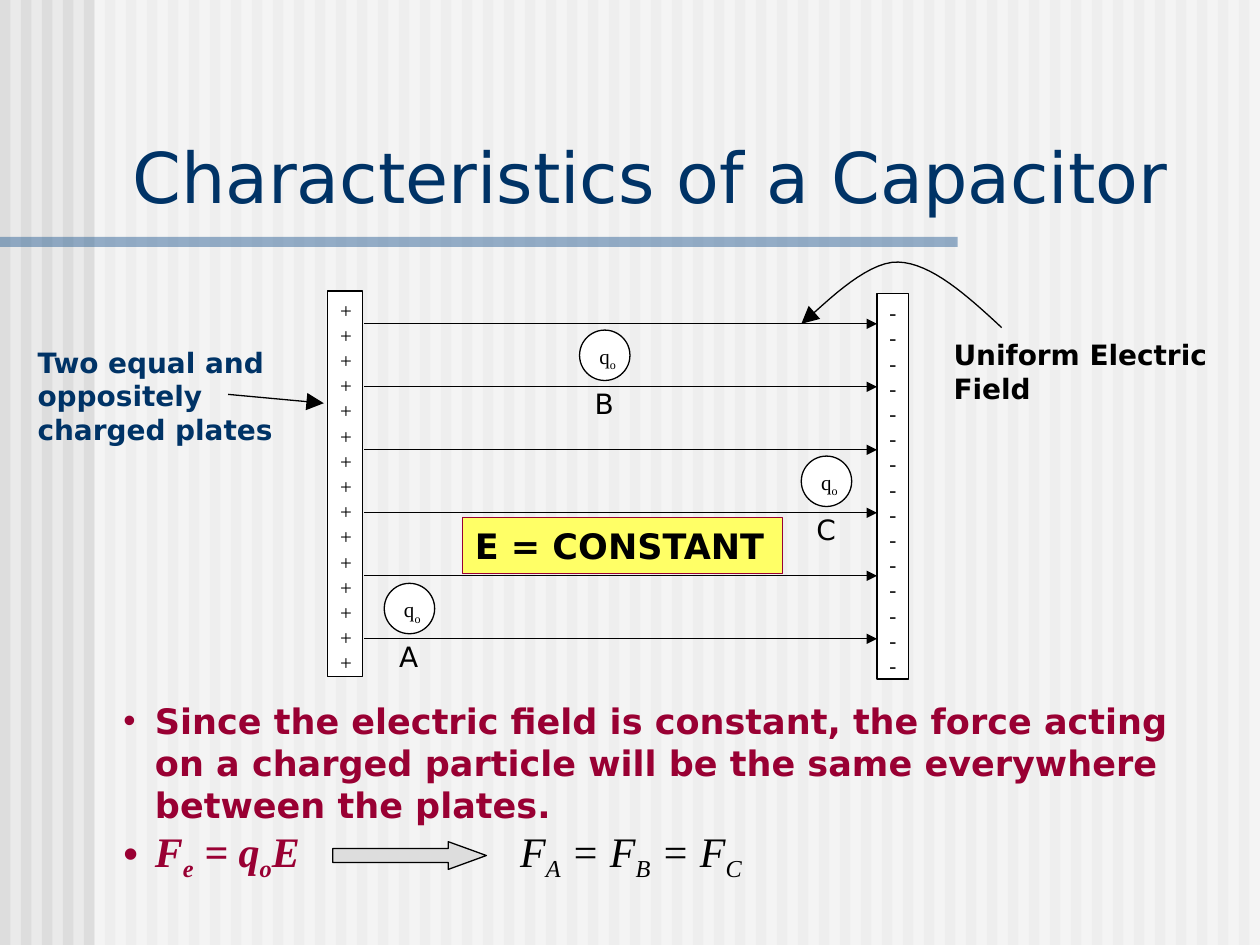
import dataclasses
import typing

import lxml.etree
import pptx
import pptx.dml.color
import pptx.enum.shapes
import pptx.enum.text
import pptx.oxml.ns
import pptx.util

COLS, ROWS = 100, 75
KIND = pptx.enum.shapes.MSO_SHAPE
FIT = pptx.enum.text.MSO_AUTO_SIZE
ANCHOR = pptx.enum.text.MSO_ANCHOR
ALIGN = pptx.enum.text.PP_ALIGN


class Box(typing.NamedTuple):
    """Place and size in columns and rows of the slide grid."""
    col: float
    row: float
    cols: float
    rows: float


class Spot(typing.NamedTuple):
    col: float
    row: float


@dataclasses.dataclass(frozen=True)
class Style:
    size: float
    color: str
    font: str = "DejaVu Sans"
    bold: bool = False
    italic: bool = False


@dataclasses.dataclass(frozen=True)
class Theme:
    back: str = "EAEAEA"
    stripe: str = "DDDDDD"
    paper: str = "FFFFFF"
    ink: str = "000000"
    rule: str = "336699"
    note: str = "FFFF66"
    edge: str = "990033"
    line: float = 0.75
    title: Style = Style(40, "003366")
    plates: Style = Style(16, "003366", bold=True)
    field: Style = Style(16, "000000", bold=True)
    letter: Style = Style(16, "000000")
    sign: Style = Style(12, "000000", "Times New Roman")
    const: Style = Style(20, "000000", bold=True)
    point: Style = Style(20, "990033", bold=True)
    force: Style = Style(24, "990033", "Times New Roman", True, True)
    equal: Style = Style(24, "000000", "Times New Roman", italic=True)


@dataclasses.dataclass(frozen=True)
class Charge:
    letter: str
    spot: Spot


THEME = Theme()
CHARGES = [Charge("B", Spot(46, 26.2)), Charge("A", Spot(30.5, 46.3)),
           Charge("C", Spot(63.6, 36.2))]
CURVE = [[Spot(79.5, 26), Spot(76.7, 23.4), Spot(73.9, 20.9), Spot(71.3, 20.8)],
         [Spot(71.3, 20.8), Spot(68.6, 20.7), Spot(65, 24.6), Spot(63.6, 25.7)]]

deck = pptx.Presentation()
deck.slide_width, deck.slide_height = pptx.util.Inches(10), pptx.util.Inches(7.5)
slide = deck.slides.add_slide(deck.slide_layouts[1])
shapes = slide.shapes


def across(col: float) -> int:
    return round(deck.slide_width * col / COLS)


def down(row: float) -> int:
    return round(deck.slide_height * row / ROWS)


def area(box: Box) -> tuple[int, int, int, int]:
    return across(box.col), down(box.row), across(box.cols), down(box.rows)


def rgb(code: str) -> pptx.dml.color.RGBColor:
    return pptx.dml.color.RGBColor.from_string(code)


def child(node, tag: str, **attrs: str):
    return lxml.etree.SubElement(node, pptx.oxml.ns.qn(tag), attrs)


def fill(para, text: str, style: Style) -> None:
    """Write one paragraph; parts between bars are subscripts."""
    para.alignment = ALIGN.LEFT
    for i, part in enumerate(text.split("|")):
        if not part:
            continue
        run = para.add_run()
        run.text = part
        font = run.font
        font.name, font.size = style.font, pptx.util.Pt(style.size)
        font.bold, font.italic = style.bold, style.italic
        font.color.rgb = rgb(style.color)
        if i % 2:
            run._r.get_or_add_rPr().set("baseline", "-25000")


def write(shape, texts: list[str], style: Style, wrap: bool = True) -> None:
    frame = shape.text_frame
    frame.word_wrap = wrap
    frame.auto_size = FIT.NONE
    frame.vertical_anchor = ANCHOR.TOP
    for i, text in enumerate(texts):
        fill(frame.add_paragraph() if i else frame.paragraphs[0], text, style)


def label(box: Box, text: str, style: Style, wrap: bool = True) -> None:
    write(shapes.add_textbox(*area(box)), [text], style, wrap)


def block(box: Box, color: str, edge: str = "", kind=KIND.RECTANGLE, alpha: int = 100):
    shape = shapes.add_shape(kind, *area(box))
    shape.shadow.inherit = False
    shape.fill.solid()
    shape.fill.fore_color.rgb = rgb(color)
    if alpha < 100:
        tint = shape.element.xpath("./p:spPr/a:solidFill/a:srgbClr")[0]
        child(tint, "a:alpha", val=str(alpha * 1000))
    if edge:
        shape.line.color.rgb = rgb(edge)
        shape.line.width = pptx.util.Pt(THEME.line)
    else:
        shape.line.fill.background()
    return shape


def point(shape, size: str) -> None:
    """Style a line and put an arrowhead at its end."""
    shape.line.color.rgb = rgb(THEME.ink)
    shape.line.width = pptx.util.Pt(THEME.line)
    line = shape.element.xpath("./p:spPr/a:ln")[0]
    child(line, "a:tailEnd", type="triangle", w=size, len=size)


def arrow(start: Spot, end: Spot, size: str = "med") -> None:
    line = shapes.add_connector(pptx.enum.shapes.MSO_CONNECTOR.STRAIGHT,
                                across(start.col), down(start.row),
                                across(end.col), down(end.row))
    point(line, size)
    child(line.element.spPr, "a:effectLst")


def bend(curve: list[Spot], t: float) -> tuple[int, int]:
    """Point at share t of a cubic Bezier curve."""
    parts = [(1 - t) ** 3, 3 * t * (1 - t) ** 2, 3 * t * t * (1 - t), t ** 3]
    return (across(sum(k * p.col for k, p in zip(parts, curve))),
            down(sum(k * p.row for k, p in zip(parts, curve))))


def sweep(curves: list[list[Spot]], steps: int = 16) -> None:
    """Draw joined Bezier curves as one open arrow."""
    dots = [bend(c, i / steps) for c in curves for i in range(1, steps + 1)]
    path = shapes.build_freeform(*bend(curves[0], 0))
    path.add_line_segments(dots, close=False)
    shape = path.convert_to_shape()
    shape.shadow.inherit = False
    shape.fill.background()
    point(shape, "lg")


def plate(box: Box, sign: str) -> None:
    shape = block(box, THEME.paper, THEME.ink)
    write(shape, [sign] * 11 + [sign * 4], THEME.sign)
    for para in shape.text_frame.paragraphs:
        para.alignment = ALIGN.CENTER


def charge(item: Charge) -> None:
    col, row = item.spot
    ball = block(Box(col, row, 4, 4), THEME.paper, THEME.ink, KIND.OVAL)
    write(ball, ["q|o|"], THEME.sign)
    ball.text_frame.margin_right = 0
    label(Box(col + 0.2, row + 4, 3.5, 3.7), item.letter, THEME.letter, False)


def hold(shape, box: Box) -> None:
    """Place a placeholder in front of what is drawn so far."""
    shape.left, shape.top, shape.width, shape.height = area(box)
    shape.element.getparent().append(shape.element)


def scene() -> None:
    slide.background.fill.solid()
    slide.background.fill.fore_color.rgb = rgb(THEME.back)
    for i in range(60):
        block(Box(i * COLS / 60, 0, COLS / 120, ROWS), THEME.stripe)
    block(Box(7.5, 0, 92.5, ROWS), THEME.paper, alpha=50)
    block(Box(0, 18.8, 76, 0.8), THEME.rule, alpha=50)
    hold(shapes.title, Box(9.5, 10.1, 89.3, 7.7))
    write(shapes.title, ["Characteristics of a Capacitor"], THEME.title)
    shapes.title.text_frame.vertical_anchor = ANCHOR.BOTTOM


def diagram() -> None:
    label(Box(74.7, 26.3, 23.4, 5.8), "Uniform Electric Field", THEME.field)
    sweep(CURVE)
    label(Box(2, 26.9, 23.2, 9), "Two equal and oppositely charged plates", THEME.plates)
    arrow(Spot(18.1, 31.3), Spot(25.7, 32), "lg")
    plate(Box(26, 23.1, 2.8, 30.6), "+")
    plate(Box(69.6, 23.3, 2.5, 30.6), "-")
    for i in range(6):
        arrow(Spot(28.9, 25.7 + 5 * i), Spot(69.6, 25.7 + 5 * i))
    note = block(Box(36.7, 41.1, 25.4, 4.4), THEME.note, THEME.edge)
    write(note, ["E = CONSTANT"], THEME.const, False)


def points() -> None:
    body = slide.placeholders[1]
    hold(body, Box(8.8, 55, 88.2, 15))
    write(body, ["Since the electric field is constant, the force acting on a charged "
                 "particle will be the same everywhere between the plates."], THEME.point)
    fill(body.text_frame.add_paragraph(), "F|e| = q|o|E", THEME.force)
    for para in body.text_frame.paragraphs:
        para.space_before = pptx.util.Pt(0)
        props = para._p.get_or_add_pPr()
        props.set("marL", str(across(2.5)))
        props.set("indent", str(-across(2.5)))
        child(props, "a:buChar", char="•")


def main() -> None:
    scene()
    diagram()
    points()
    for item in CHARGES:
        charge(item)
    sign = block(Box(26.4, 66.8, 12.2, 2.2), THEME.stripe, THEME.ink, KIND.RIGHT_ARROW)
    sign.adjustments[1] = 1.375
    label(Box(40.3, 65, 20.1, 5), "F|A| = F|B| = F|C|", THEME.equal, False)
    deck.save("out.pptx")


if __name__ == "__main__":
    main()
